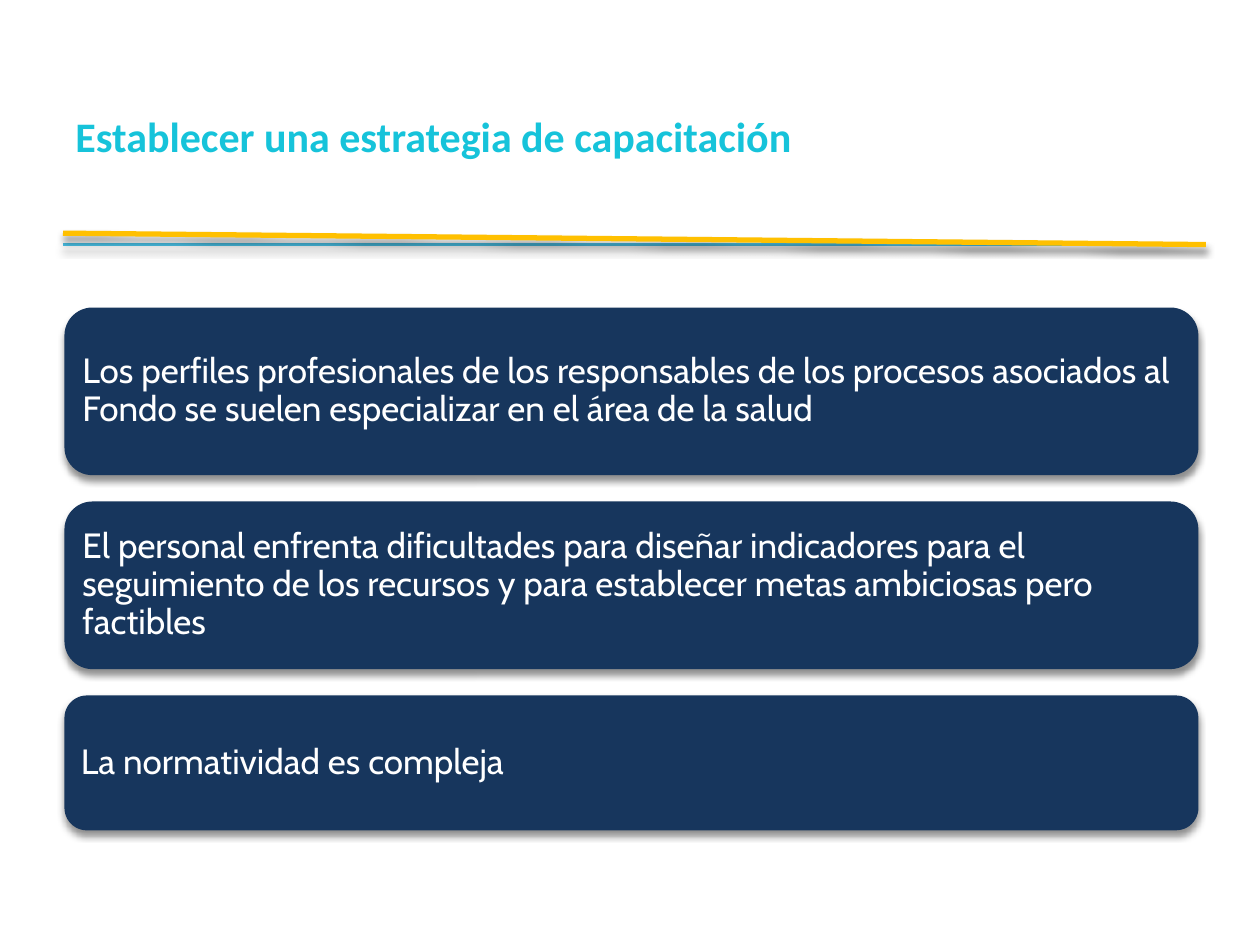
from lxml import etree
from pptx import Presentation
from pptx.dml.color import RGBColor
from pptx.enum import shapes, text
from pptx.oxml import parse_xml
from pptx.oxml.ns import nsdecls
from pptx.util import Cm, Pt

NAVY, WHITE, CYAN, BLUE, AMBER = "17365D", "FFFFFF", "16C3DA", "48BCE0", "FFC000"
LEFT, TOP, WIDTH, GAP = 1.3, 6.2, 22.86, 0.53
RULE_START, RULE_END = 1.27, 24.31
CARDS = [
    ("Los perfiles profesionales de los responsables de los procesos "
     "asociados al Fondo se suelen especializar en el área de la salud", 3.38),
    ("El personal enfrenta dificultades para diseñar indicadores para el "
     "seguimiento de los recursos y para establecer metas ambiciosas pero "
     "factibles", 3.38),
    ("La normatividad es compleja", 2.72),
]


def color(value):
    return RGBColor.from_string(value)


def add_shadow(properties):
    """Append a soft shadow that falls straight down."""
    effects = parse_xml(f"<a:effectLst {nsdecls('a')}/>")
    shadow = etree.SubElement(
        effects, effects.tag.replace("effectLst", "outerShdw"),
        blurRad=str(Pt(4)), dist=str(Pt(3)), dir="5400000", rotWithShape="0")
    black = etree.SubElement(
        shadow, effects.tag.replace("effectLst", "srgbClr"), val="000000")
    etree.SubElement(
        black, effects.tag.replace("effectLst", "alpha"), val="43000")
    properties.append(effects)


def write(box, words, font, size, ink, bold=False):
    frame = box.text_frame
    frame.word_wrap = True
    frame.vertical_anchor = text.MSO_ANCHOR.MIDDLE
    para = frame.paragraphs[0]
    para.alignment = text.PP_ALIGN.LEFT
    span = para.add_run()
    span.text = words
    span.font.name = font
    span.font.size = Pt(size)
    span.font.bold = bold
    span.font.color.rgb = color(ink)
    return frame


def add_title(page, words):
    box = page.shapes.add_textbox(Cm(1.27), Cm(0.76), Cm(22.86), Cm(3.96))
    write(box, words, "Calibri", 24, CYAN, bold=True)


def add_card(page, top, height, words):
    card = page.shapes.add_shape(
        shapes.MSO_SHAPE.ROUNDED_RECTANGLE,
        Cm(LEFT), Cm(top), Cm(WIDTH), Cm(height))
    card.fill.solid()
    card.fill.fore_color.rgb = color(NAVY)
    card.line.fill.background()
    add_shadow(card._element.spPr)
    frame = write(card, words, "Cabin", 20, WHITE)
    frame.margin_left = frame.margin_right = Cm(0.2)
    frame.margin_top = frame.margin_bottom = Cm(0.2)
    frame.paragraphs[0].line_spacing = 0.9


def add_rule(page, start_y, end_y, ink, weight):
    rule = page.shapes.add_connector(
        shapes.MSO_CONNECTOR.STRAIGHT,
        Cm(RULE_START), Cm(start_y), Cm(RULE_END), Cm(end_y))
    rule.line.color.rgb = color(ink)
    rule.line.width = Pt(weight)
    add_shadow(rule._element.spPr)


def main():
    deck = Presentation()
    deck.slide_width, deck.slide_height = Cm(25.4), Cm(19.05)
    page = deck.slides.add_slide(deck.slide_layouts[6])
    add_title(page, "Establecer una estrategia de capacitación")
    top = TOP
    for words, height in CARDS:
        add_card(page, top, height, words)
        top += height + GAP
    add_rule(page, 4.93, 4.93, BLUE, 1.5)
    add_rule(page, 4.7, 4.93, AMBER, 3)
    deck.save("out.pptx")


if __name__ == "__main__":
    main()
